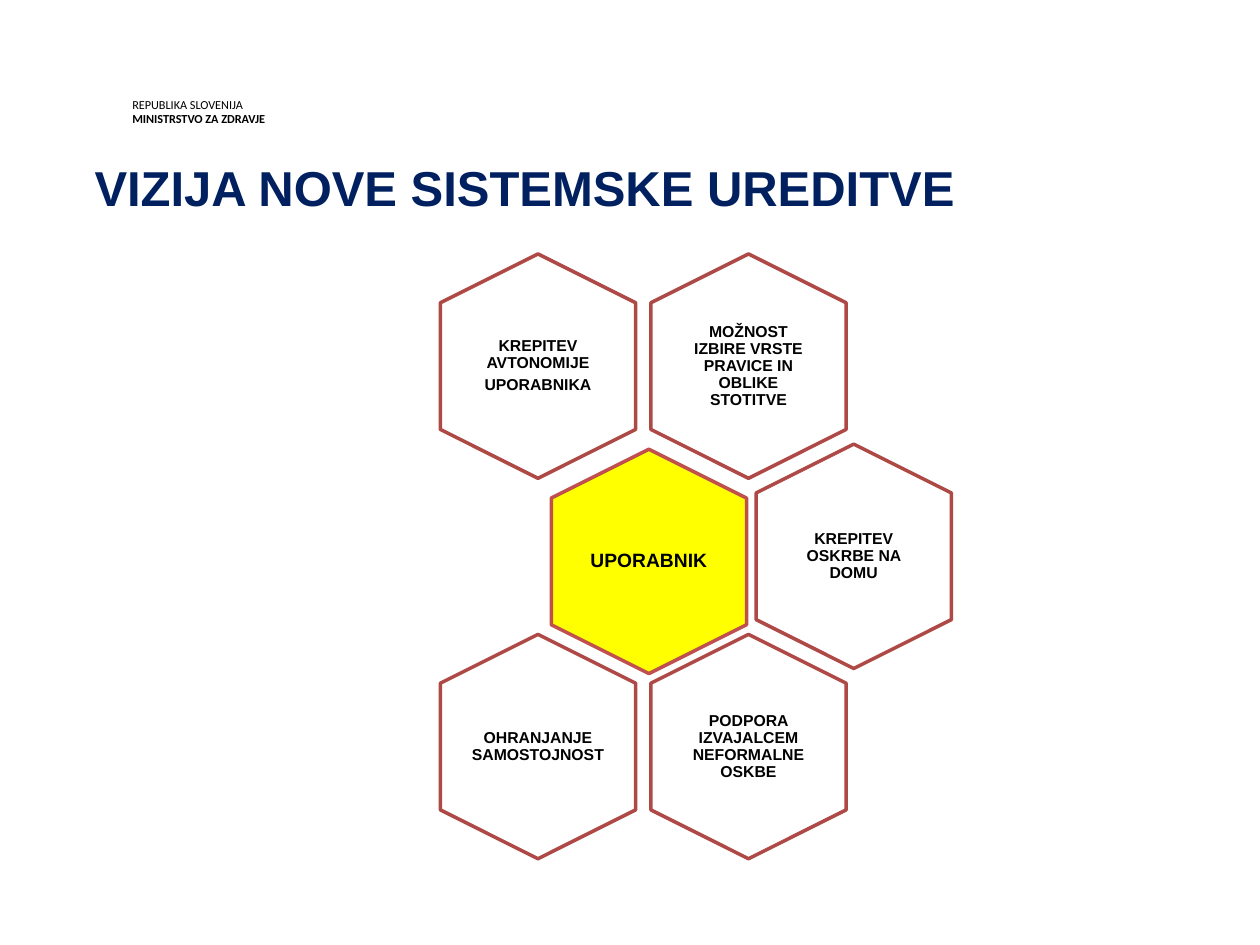
from pptx import Presentation
from pptx.dml.color import RGBColor
from pptx.enum import shapes, text
from pptx.util import Pt

# Content
TITLE = "VIZIJA NOVE SISTEMSKE UREDITVE"
OFFICE = [("REPUBLIKA SLOVENIJA", False), ("MINISTRSTVO ZA ZDRAVJE", True)]
# Outer cells: column and row in the honeycomb, inset, paragraphs
CELLS = [
    (1, 0, 2.9, ["MOŽNOST IZBIRE VRSTE PRAVICE IN OBLIKE STOTITVE"]),
    (0, 0, 0, ["KREPITEV AVTONOMIJE", "UPORABNIKA"]),
    (1.5, 1, 0, ["KREPITEV OSKRBE NA DOMU"]),
    (1, 2, 2.9, ["PODPORA IZVAJALCEM NEFORMALNE OSKBE"]),
    (0, 2, 0, ["OHRANJANJE SAMOSTOJNOST"]),
]
CORE = ["UPORABNIK"]

# Theme and geometry, in points
THEME = {
    "navy": "002060", "black": "000000", "white": "FFFFFF",
    "yellow": "FFFF00", "rust": "AE4946", "red": "C0504D",
    "head": 28, "core": 11, "cell": 9, "small": 7,
    "font": "Arial", "alt": "Calibri", "line": 2,
}
ORIGIN = (307.4, 209.2)
STEP = (120.3, 108.7)
HUB = (370.8, 320.8)
HEX = (128.2, 111.6)
LABEL = (77, 88.6)


def color(name):
    return RGBColor.from_string(THEME[name])


def assign(item, values):
    for key, value in values.items():
        setattr(item, key, value)


def style(par, size, ink="black", font="font", bold=True, **form):
    assign(par, form)
    assign(par.font, {"size": Pt(THEME[size]), "name": THEME[font], "bold": bold})
    par.font.color.rgb = color(ink)


def setup(frame, inset, anchor):
    assign(frame, {"word_wrap": True, "vertical_anchor": anchor})
    assign(frame, {f"margin_{side}": Pt(inset)
                   for side in ("left", "right", "top", "bottom")})


def centred(mid, size):
    return [Pt(m - s / 2) for m, s in zip(mid, size)] + [Pt(s) for s in size]


def write(frame, lines):
    for i, line in enumerate(lines):
        par = frame.paragraphs[0] if i == 0 else frame.add_paragraph()
        par.text = line
        yield par


def hexagon(slide, mid, lines, inset, fill="white", edge="rust", size="cell"):
    # Pointed-top outline
    cell = slide.shapes.add_shape(shapes.MSO_SHAPE.HEXAGON, *centred(mid, HEX))
    cell.rotation = 90
    cell.adjustments[0] = 0.25
    cell.shadow.inherit = False
    cell.fill.solid()
    cell.fill.fore_color.rgb = color(fill)
    cell.line.color.rgb = color(edge)
    cell.line.width = Pt(THEME["line"])
    # Upright label
    frame = slide.shapes.add_textbox(*centred(mid, LABEL)).text_frame
    setup(frame, inset, text.MSO_ANCHOR.MIDDLE)
    for par in write(frame, lines):
        style(par, size, alignment=text.PP_ALIGN.CENTER, line_spacing=0.9,
              space_after=Pt(THEME[size] * 0.35))


def main():
    deck = Presentation()
    assign(deck, {"slide_width": Pt(720), "slide_height": Pt(540)})
    slide = deck.slides.add_slide(deck.slide_layouts[5])

    # Ministry name
    box = slide.shapes.add_textbox(Pt(75.6), Pt(55.4), Pt(95), Pt(16.8))
    setup(box.text_frame, 0, text.MSO_ANCHOR.TOP)
    names = [name for name, _ in OFFICE]
    for par, (_, bold) in zip(write(box.text_frame, names), OFFICE):
        style(par, "small", font="alt", bold=bold, line_spacing=Pt(8.4))

    # Title
    title = slide.shapes.title
    assign(title, {"left": Pt(46.8), "top": Pt(86.4),
                   "width": Pt(621.4), "height": Pt(41.2)})
    title.fill.solid()
    title.fill.fore_color.rgb = color("white")
    frame = title.text_frame
    frame.text = TITLE
    assign(frame, {"word_wrap": True, "vertical_anchor": text.MSO_ANCHOR.TOP,
                   "auto_size": text.MSO_AUTO_SIZE.NONE})
    style(frame.paragraphs[0], "head", "navy", alignment=text.PP_ALIGN.LEFT)

    # Honeycomb around the user
    for col, row, inset, lines in CELLS:
        mid = [o + n * s for o, n, s in zip(ORIGIN, (col, row), STEP)]
        hexagon(slide, mid, lines, inset)
    hexagon(slide, HUB, CORE, 3.6, "yellow", "red", "core")

    deck.save("out.pptx")


if __name__ == "__main__":
    main()
